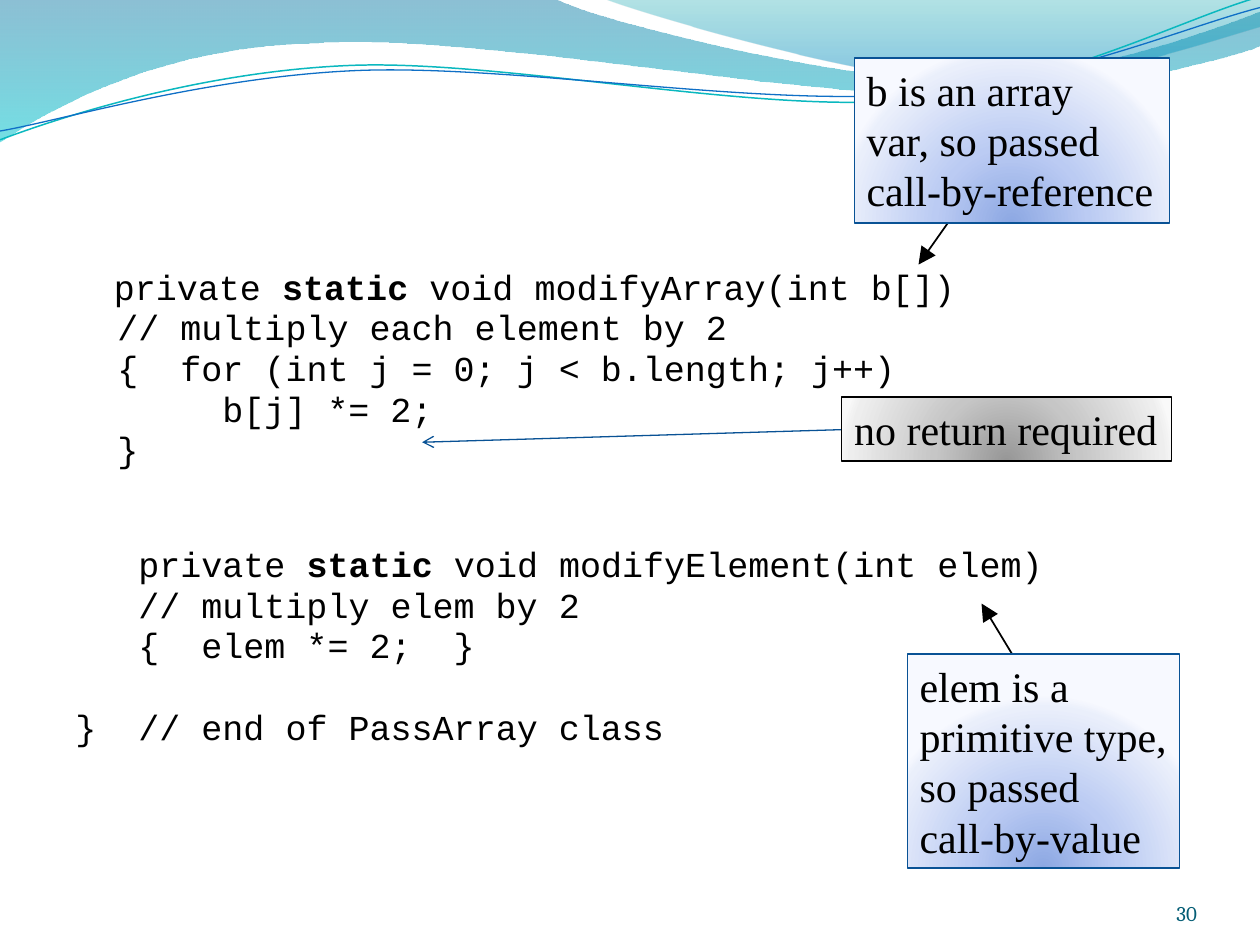
from math import cos, radians, sin

from lxml import etree
from pptx import Presentation
from pptx.dml.color import RGBColor
from pptx.enum.shapes import MSO_CONNECTOR, MSO_SHAPE
from pptx.enum.text import MSO_ANCHOR, PP_ALIGN
from pptx.oxml import parse_xml
from pptx.oxml.ns import nsdecls, qn
from pptx.util import Inches, Pt

BLACK = RGBColor(0, 0, 0)
BLUE = RGBColor(0x0F, 0x6F, 0xC6)
TEAL = RGBColor(0x0A, 0xB8, 0xBF)
EDGE = RGBColor(0x09, 0x52, 0x95)
PAGE = RGBColor(0x04, 0x5D, 0x75)

# Gradient stops: position %, colour, opacity %
BLUE_GLOW = [(0, "8DA8E3", 100), (43, "BBCBF3", 100), (93, "EAEFFB", 100), (100, "F7F9FF", 100)]
GREY_GLOW = [(0, "979797", 100), (43, "C6C6C6", 100), (93, "EEEEEE", 100), (100, "F9F9F9", 100)]
LINEAR = '<a:lin ang="5400000" scaled="1"/>'
RADIAL = ('<a:path path="circle"><a:fillToRect l="50000" t="130000" '
          'r="50000" b="-30000"/></a:path>')

# Outlines: a start point, then steps; one point is a straight step, three a cubic curve
BANDS = [
    ([[(0, 0)], [(4.4, -0.01)], [(4.76, 0.17), (6.64, 0.63), (7.58, 0.63)],
      [(8.53, 0.63), (9.58, 0.26), (10, 0.09)], [(10.01, 0.36)],
      [(9.83, 0.44), (8.7, 0.76), (7.46, 0.75)], [(6.22, 0.75), (3.82, 0.28), (2.57, 0.34)],
      [(1.29, 0.36), (0.46, 0.83), (-0.01, 1.13)]],
     [(0, "0074A1", 45), (100, "00C6CF", 55)]),
    ([[(4.79, -0.01)], [(5.09, 0.11), (6.82, 0.62), (7.69, 0.65)],
      [(8.56, 0.69), (9.61, 0.32), (10, 0.21)], [(10, 0)]],
     [(0, "00A1A9", 30), (80, "008BBF", 45)]),
]
TILT = 2.7
WAVES = [
    ([[(0, 1.11)], [(0.48, 0.93), (1.58, 0.57), (2.77, 0.52)],
      [(3.95, 0.47), (5.93, 0.89), (7.13, 0.8)], [(8.33, 0.71), (9.38, 0.15), (9.98, -0.02)]],
     (4.99, 0.57), TEAL, 0.85),
    ([[(0, 1.04)], [(0.47, 0.96), (1.64, 0.61), (2.83, 0.56)],
      [(4.03, 0.51), (5.97, 0.84), (7.17, 0.75)], [(8.36, 0.67), (9.41, 0.21), (10, 0.06)]],
     (4.99, 0.59), BLUE, 0.75),
]

# Code lines: indent in characters, space before in points, text split around the bold word
CHAR = 1 / 6
STEP = 4
CODE = [
    (1.83, STEP, ["private ", "static", " void modifyArray(int b[])"]),
    (2, STEP, ["// multiply each element by 2"]),
    (2, STEP, ["{  for (int j = 0; j < b.length; j++)"]),
    (7, STEP, ["b[j] *= 2;"]),
    (2, STEP, ["}"]),
    (3, 46.4, ["private ", "static", " void modifyElement(int elem)"]),
    (3, STEP, ["// multiply elem by 2"]),
    (3, STEP, ["{  elem *= 2;  }"]),
    (0, 27.2, ["}  // end of PassArray class"]),
]

ARROWS = [
    ((7.6, 1.66), (7.29, 2.1), BLACK, 1, "triangle", "lg"),
    ((8.45, 5.88), (7.79, 4.79), BLACK, 1, "triangle", "lg"),
    ((6.68, 3.41), (3.35, 3.51), EDGE, 0.75, "arrow", "med"),
]
CALLOUTS = [
    ((6.78, 0.46, 2.5, 1.31), ["b is an array", "var, so passed", "call-by-reference"],
     BLUE_GLOW, EDGE),
    ((7.2, 5.19, 2.16, 1.7), ["elem is a", "primitive type,", "so passed", "call-by-value"],
     BLUE_GLOW, EDGE),
    ((6.68, 3.15, 2.62, 0.51), ["no return required"], GREY_GLOW, BLACK),
]


def turn(outline, center, degrees):
    """Rotate every point of an outline clockwise about a center."""
    cx, cy = center
    c, s = cos(radians(degrees)), sin(radians(degrees))
    return [[(cx + (x - cx) * c - (y - cy) * s, cy + (x - cx) * s + (y - cy) * c)
             for x, y in step] for step in outline]


def add_outline(shapes, outline, close):
    """Build a freeform through the end points, then bend its three-point steps."""
    steps = [[(Inches(x), Inches(y)) for x, y in step] for step in outline]
    builder = shapes.build_freeform(*steps[0][0])
    builder.add_line_segments([step[-1] for step in steps[1:]], close=close)
    sp = builder.convert_to_shape()
    sp.shadow.inherit = False
    segments = list(sp._element.iter(qn("a:lnTo")))
    for segment, step in zip(segments, steps[1:]):
        if len(step) == 3:
            segment.tag = qn("a:cubicBezTo")
            segment.remove(segment[0])
            for x, y in step:
                etree.SubElement(segment, qn("a:pt"), x=str(x - sp.left), y=str(y - sp.top))
    return sp


def set_gradient(sp, stops, direction):
    """Replace the shape's fill; python-pptx has no opacity or radial gradient."""
    sp.fill.background()
    old = sp._element.spPr.find(qn("a:noFill"))
    gs = "".join(f'<a:gs pos="{pos * 1000}"><a:srgbClr val="{color}">'
                 f'<a:alpha val="{alpha * 1000}"/></a:srgbClr></a:gs>'
                 for pos, color, alpha in stops)
    old.getparent().replace(old, parse_xml(
        f'<a:gradFill {nsdecls("a")} rotWithShape="1"><a:gsLst>{gs}</a:gsLst>'
        f'{direction}</a:gradFill>'))


def set_line(sp, color, width):
    sp.line.color.rgb = color
    sp.line.width = Pt(width)


def add_run(p, text, font, size, color=BLACK, bold=False):
    r = p.add_run()
    r.text = text
    r.font.name, r.font.size, r.font.bold = font, Pt(size), bold
    r.font.color.rgb = color


def paragraphs(tf, items):
    """Yield each item with its own paragraph."""
    for i, item in enumerate(items):
        yield item, tf.add_paragraph() if i else tf.paragraphs[0]


def add_code(shapes):
    tf = shapes.add_textbox(*map(Inches, (0.5, 2.12, 9, 4.8))).text_frame
    tf.word_wrap = True
    for (indent, before, parts), p in paragraphs(tf, CODE):
        p.line_spacing = 0.8
        p.space_before = Pt(before)
        p._p.get_or_add_pPr().set("marL", str(Inches(indent * CHAR)))
        for part in parts:
            add_run(p, part, "Courier New", 20, bold=part == "static")


def add_arrow(shapes, start, end, color, width, head, size):
    line = shapes.add_connector(MSO_CONNECTOR.STRAIGHT, *map(Inches, start + end))
    set_line(line, color, width)
    etree.SubElement(line.line._get_or_add_ln(), qn("a:tailEnd"), type=head, w=size, len=size)
    etree.SubElement(line._element.spPr, qn("a:effectLst"))


def add_callout(shapes, box, lines, stops, edge):
    sp = shapes.add_shape(MSO_SHAPE.RECTANGLE, *map(Inches, box))
    set_gradient(sp, stops, RADIAL)
    set_line(sp, edge, 0.75)
    sp.shadow.inherit = False
    tf = sp.text_frame
    tf.word_wrap = False
    tf.vertical_anchor = MSO_ANCHOR.TOP
    for text, p in paragraphs(tf, lines):
        p.alignment = PP_ALIGN.LEFT
        add_run(p, text, "Times New Roman", 24)


def add_page_number(shapes):
    tf = shapes.add_textbox(*map(Inches, (8.67, 6.95, 0.83, 0.4))).text_frame
    tf.word_wrap = True
    tf.vertical_anchor = MSO_ANCHOR.BOTTOM
    tf.margin_left = tf.margin_right = tf.margin_top = tf.margin_bottom = 0
    p = tf.paragraphs[0]
    p.alignment = PP_ALIGN.RIGHT
    add_run(p, "30", "Cambria", 12, PAGE)


def main():
    prs = Presentation()
    prs.slide_width, prs.slide_height = Inches(10), Inches(7.5)
    shapes = prs.slides.add_slide(prs.slide_layouts[6]).shapes
    for outline, stops in BANDS:
        band = add_outline(shapes, outline, close=True)
        set_gradient(band, stops, LINEAR)
        band.line.fill.background()
    for outline, center, color, width in WAVES:
        wave = add_outline(shapes, turn(outline, center, TILT), close=False)
        wave.rotation = -TILT
        wave.fill.background()
        set_line(wave, color, width)
    add_code(shapes)
    for arrow in ARROWS:
        add_arrow(shapes, *arrow)
    for callout in CALLOUTS:
        add_callout(shapes, *callout)
    add_page_number(shapes)
    prs.save("out.pptx")


if __name__ == "__main__":
    main()
